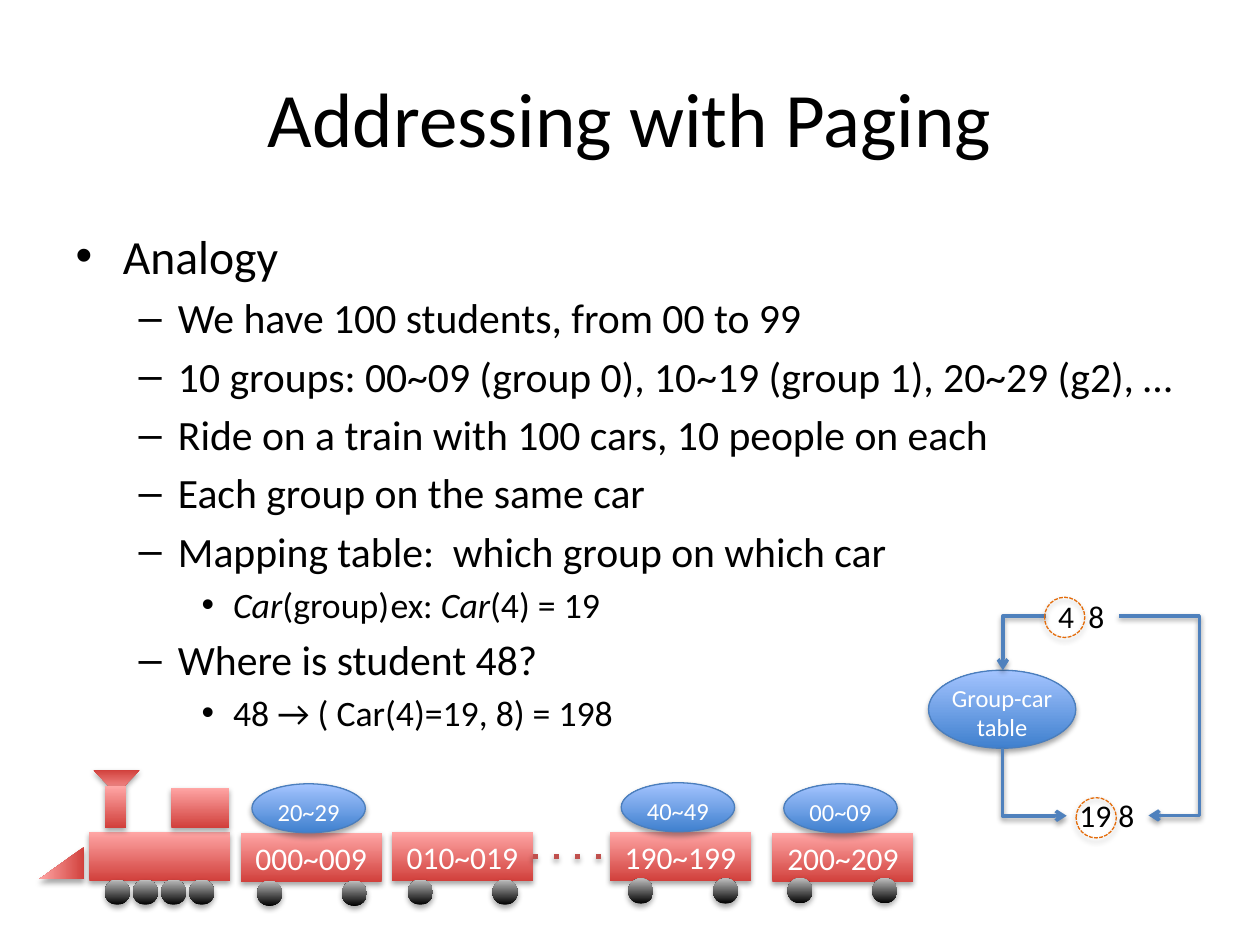
from dataclasses import dataclass

from lxml.etree import SubElement
from pptx import Presentation
from pptx.dml.color import RGBColor
from pptx.enum.dml import MSO_LINE
from pptx.enum.shapes import MSO_CONNECTOR as Link, MSO_SHAPE as Preset
from pptx.enum.text import MSO_ANCHOR as Anchor, MSO_AUTO_SIZE as AutoSize, PP_ALIGN as Align
from pptx.oxml.ns import qn
from pptx.util import Pt

FONT = "Calibri"
COLORS = {
    "text": "000000", "white": "FFFFFF", "shadow": "000000",
    "link": "4F81BD", "oval_line": "4B7EBC", "mark": "E46C0A", "dots": "C0504D",
}
GRADIENTS = {
    "train": ("D1403C", "FFA6A5"),
    "wheel": ("000000", "BDBDBD"),
    "oval": ("3F80CE", "A4C4FF"),
}
CAR_WIDTH, CAR_HEIGHT, WHEEL = 80.6, 28, 14.4
WHEEL_GAP = 48.4


@dataclass
class Box:
    left: float
    top: float
    width: float
    height: float


@dataclass
class Car:
    left: float
    top: float
    label: str
    wheel_left: float
    wheel_top: float
    group: str = ""


@dataclass
class Line:
    level: int
    spans: list  # (text, italic) pairs


LINES = [
    Line(0, [("Analogy", False)]),
    Line(1, [("We have 100 students, from 00 to 99", False)]),
    Line(1, [("10 groups: 00~09 (group 0), 10~19 (group 1), 20~29 (g2), …", False)]),
    Line(1, [("Ride on a train with 100 cars, 10 people on each", False)]),
    Line(1, [("Each group on the same car", False)]),
    Line(1, [("Mapping table:  which group on which car", False)]),
    Line(2, [("Car", True), ("(group)\tex: ", False), ("Car", True), ("(4) = 19", False)]),
    Line(1, [("Where is student 48?", False)]),
    Line(2, [("48 → ( Car(4)=19, 8) = 198", False)]),
]
LEVEL_SIZES = (27.2, 23.8, 20.4)

CARS = [
    Car(137.5, 476, "000~009", 146.9, 503.3, "20~29"),
    Car(223.9, 475.4, "010~019", 233, 502.6),
    Car(348.5, 475.4, "190~199", 359, 502, "40~49"),
    Car(441.4, 476, "200~209", 450, 501.8, "00~09"),
]


def rgb(name: str) -> RGBColor:
    return RGBColor.from_string(COLORS[name])


def style_span(span, size: float, color: str) -> None:
    span.font.name, span.font.size = FONT, Pt(size)
    span.font.color.rgb = rgb(color)


def add_shadow(properties, distance: float, opacity: int) -> None:
    effects = properties.find(qn("a:effectLst"))
    if effects is None:
        effects = SubElement(properties, qn("a:effectLst"))
    outer = SubElement(effects, qn("a:outerShdw"), blurRad=str(Pt(3.15)),
                       dist=str(Pt(distance)), dir="5400000", rotWithShape="0")
    tint = SubElement(outer, qn("a:srgbClr"), val=COLORS["shadow"])
    SubElement(tint, qn("a:alpha"), val=str(opacity * 1000))


def add_part(page, kind, box: Box, gradient: str = "", line: str = "", rotation: float = 0):
    part = page.shapes.add_shape(kind, Pt(box.left), Pt(box.top), Pt(box.width), Pt(box.height))
    part.rotation = rotation
    if gradient:
        part.fill.gradient()
        part.fill.gradient_angle = 90
        for stop, color in zip(part.fill.gradient_stops, GRADIENTS[gradient]):
            stop.color.rgb = RGBColor.from_string(color)
        part.fill.gradient_stops[0].position, part.fill.gradient_stops[1].position = 0, 1
    else:
        part.fill.background()
    if line:
        part.line.color.rgb, part.line.width = rgb(line), Pt(0.75)
    else:
        part.line.fill.background()
    part.shadow.inherit = False
    add_shadow(part._element.spPr, 1.8, 35)
    return part


def add_label(part, text: str, size: float) -> None:
    frame = part.text_frame
    frame.text, frame.word_wrap = text, True
    frame.vertical_anchor = Anchor.MIDDLE
    frame.paragraphs[0].alignment = Align.CENTER
    style_span(frame.paragraphs[0].runs[0], size, "white")


def add_oval(page, box: Box, text: str) -> None:
    oval = add_part(page, Preset.OVAL, box, "oval", "oval_line")
    add_label(oval, text, 14)
    frame = oval.text_frame
    frame.margin_left = frame.margin_right = frame.margin_bottom = 0
    frame.margin_top = Pt(3.6)


def add_wheel(page, left: float, top: float) -> None:
    add_part(page, Preset.OVAL, Box(left, top, WHEEL, WHEEL), "wheel")


def add_car(page, car: Car):
    body = add_part(page, Preset.RECTANGLE, Box(car.left, car.top, CAR_WIDTH, CAR_HEIGHT), "train")
    add_label(body, car.label, 18)
    for offset in (0, WHEEL_GAP):
        add_wheel(page, car.wheel_left + offset, car.wheel_top)
    if car.group:
        add_oval(page, Box(car.left + 6.5, car.top - 28.1, 64.8, 28), car.group)
    return body


def add_elbow(page, start: tuple, end: tuple, preset: str, turn: int = 0, bend: float = 0) -> None:
    elbow = page.shapes.add_connector(Link.ELBOW, *(Pt(value) for value in start + end))
    elbow.line.color.rgb, elbow.line.width = rgb("link"), Pt(2)
    properties = elbow._element.spPr
    geometry = properties.find(qn("a:prstGeom"))
    geometry.set("prst", preset)
    if turn:
        properties.find(qn("a:xfrm")).set("rot", str(turn * 60000))
    if bend:
        guides = geometry.find(qn("a:avLst"))
        SubElement(guides, qn("a:gd"), name="adj1", fmla=f"val {round(bend * 100000)}")
    SubElement(properties.find(qn("a:ln")), qn("a:tailEnd"), type="arrow")
    add_shadow(properties, 1.6, 38)


def add_address(page, text: str, box: Box, mark: Box) -> None:
    label = page.shapes.add_textbox(Pt(box.left), Pt(box.top), Pt(box.width), Pt(box.height))
    frame = label.text_frame
    frame.text, frame.word_wrap, frame.auto_size = text, False, AutoSize.SHAPE_TO_FIT_TEXT
    style_span(frame.paragraphs[0].runs[0], 18, "text")
    ring = add_part(page, Preset.OVAL, mark, line="mark")
    ring.line.dash_style = MSO_LINE.SQUARE_DOT


def fill_placeholders(page) -> None:
    title, body = page.shapes.title, page.placeholders[1]
    title.left, title.top, title.width, title.height = Pt(36), Pt(21.6), Pt(648), Pt(90)
    title.text_frame.text = "Addressing with Paging"
    style_span(title.text_frame.paragraphs[0].runs[0], 44, "text")
    body.left, body.top, body.width, body.height = Pt(36), Pt(126), Pt(648), Pt(286.6)
    frame = body.text_frame
    frame.auto_size = AutoSize.NONE
    for index, line in enumerate(LINES):
        para = frame.add_paragraph() if index else frame.paragraphs[0]
        para.level = line.level
        for text, italic in line.spans:
            span = para.add_run()
            span.text, span.font.italic = text, italic
            style_span(span, LEVEL_SIZES[line.level], "text")


def draw_train(page) -> None:
    # Engine: funnel, body, cowcatcher, chimney, cab
    add_part(page, Preset.ISOSCELES_TRIANGLE, Box(53.3, 440, 26.6, 13.7), "train", rotation=180)
    add_part(page, Preset.RECTANGLE, Box(51.1, 475.4, CAR_WIDTH, CAR_HEIGHT), "train")
    add_part(page, Preset.RIGHT_TRIANGLE, Box(25.9, 480.2, 18.7, 25.9), "train", rotation=270)
    add_part(page, Preset.RECTANGLE, Box(59.8, 449.3, 12.2, 23.8), "train")
    add_part(page, Preset.RECTANGLE, Box(97.9, 450, 33.1, 23), "train")
    for index in range(4):
        add_wheel(page, 59.8 + 16.1 * index, 502.6)

    # Cars, with dots for those left out
    bodies = [add_car(page, car) for car in CARS]
    dots = page.shapes.add_connector(Link.STRAIGHT, 0, 0, 0, 0)
    dots.begin_connect(bodies[1], 3)
    dots.end_connect(bodies[2], 1)
    dots.line.color.rgb, dots.line.width = rgb("dots"), Pt(3)
    dots.line.dash_style = MSO_LINE.ROUND_DOT
    dots.line._ln.find(qn("a:prstDash")).set("val", "dot")
    add_shadow(dots._element.spPr, 1.8, 35)


def draw_lookup(page) -> None:
    add_oval(page, Box(530.6, 383, 84.2, 44.6), "Group-car table")
    add_elbow(page, (597.6, 352), (573.1, 383), "bentConnector2")
    add_elbow(page, (610.6, 428.4), (571.7, 465.1), "bentConnector2", turn=270)
    add_elbow(page, (639.4, 352), (656.3, 466), "bentConnector3", bend=2.72)
    add_address(page, "4  8", Box(597.6, 337.7, 41, 28.8), Box(596.9, 341.3, 23, 23))
    add_address(page, "19 8", Box(609.8, 451.4, 46.1, 28.8), Box(614.9, 455.8, 23, 23))


def main() -> None:
    deck = Presentation()
    deck.slide_width, deck.slide_height = Pt(720), Pt(540)
    page = deck.slides.add_slide(deck.slide_layouts[1])
    fill_placeholders(page)
    draw_lookup(page)
    draw_train(page)
    deck.save("out.pptx")


if __name__ == "__main__":
    main()
